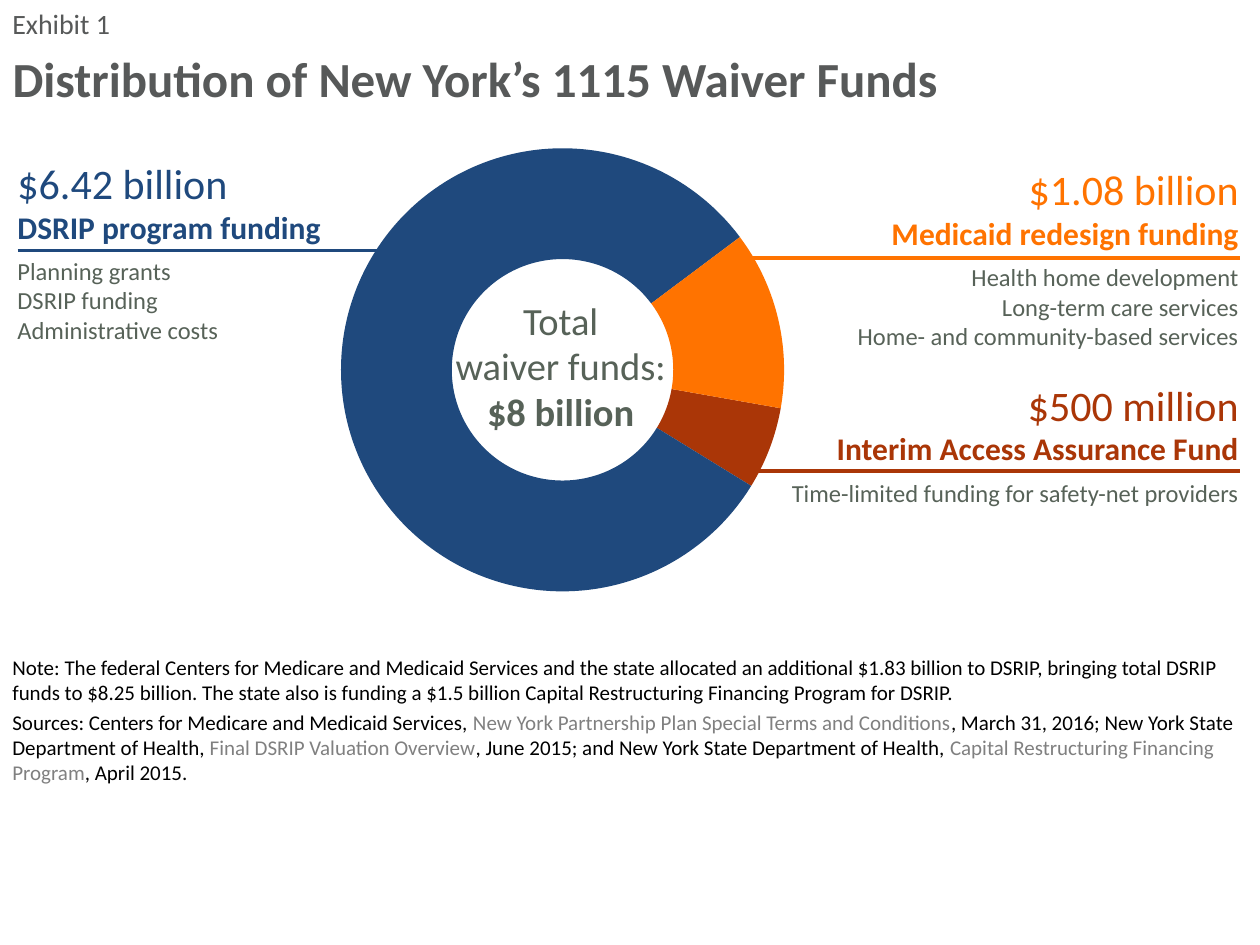
"""Build the exhibit slide on the distribution of New York's 1115 waiver funds."""
from dataclasses import dataclass

from lxml import etree
from pptx import Presentation
from pptx import util as u
from pptx.chart import data as chart_data
from pptx.dml.color import RGBColor
from pptx.enum import chart as chart_enum, shapes, text
from pptx.oxml import parse_xml
from pptx.oxml.ns import nsdecls, qn


@dataclass(frozen=True)
class Theme:
    font: str = "Calibri"
    heading: str = "575959"
    detail: str = "576258"
    note: str = "000000"
    source: str = "808080"
    blue: str = "1F497D"
    orange: str = "FF7300"
    red: str = "AA3607"
    title_size: int = 28
    amount_size: int = 24
    total_size: int = 22
    label_size: int = 18
    exhibit_size: int = 16
    detail_size: int = 14
    note_size: int = 12


THEME = Theme()
LEFT, CENTER, RIGHT = text.PP_ALIGN.LEFT, text.PP_ALIGN.CENTER, text.PP_ALIGN.RIGHT

EXHIBIT = "Exhibit 1"
TITLE = "Distribution of New York’s 1115 Waiver Funds"
TOTAL = [("Total", False), ("waiver funds:", False), ("$8 billion", True)]
SLICES = [("1", 6, THEME.red), ("2", 81, THEME.blue), ("3", 13, THEME.orange)]
FUNDS = [
    dict(amount="$6.42 billion", label="DSRIP program funding", color=THEME.blue, align=LEFT,
         details=["Planning grants", "DSRIP funding", "Administrative costs"],
         box=(0.04, 1.2, 2.66, 1.6), rule=(0.14, 3.21, 1.99)),
    dict(amount="$1.08 billion", label="Medicaid redesign funding", color=THEME.orange, align=RIGHT,
         details=["Health home development", "Long-term care services",
                  "Home- and community-based services"],
         box=(6.43, 1.25, 3.5, 1.6), rule=(5.85, 9.84, 2.05)),
    dict(amount="$500 million", label="Interim Access Assurance Fund", color=THEME.red, align=RIGHT,
         details=["Time-limited funding for safety-net providers"],
         box=(6.06, 2.96, 3.87, 1.13), rule=(5.96, 9.84, 3.74)),
]
NOTES = [
    [("Note: The federal Centers for Medicare and Medicaid Services and the state allocated an "
      "additional $1.83 billion to DSRIP, bringing total DSRIP funds to $8.25 billion. The state "
      "also is funding a $1.5 billion Capital Restructuring Financing Program for DSRIP.", False)],
    [("Sources: Centers for Medicare and Medicaid Services, ", False),
     ("New York Partnership Plan Special Terms and Conditions", True),
     (", March 31, 2016; New York State Department of Health, ", False),
     ("Final DSRIP Valuation Overview", True),
     (", June 2015; and New York State Department of Health, ", False),
     ("Capital Restructuring Financing Program", True),
     (", April 2015.", False)],
]


def inches(values):
    return [u.Inches(value) for value in values]


def style(font, size, color, bold=False):
    font.name, font.size, font.bold = THEME.font, u.Pt(size), bold
    font.color.rgb = RGBColor.from_string(color)


def add_box(slide, box):
    frame = slide.shapes.add_textbox(*inches(box)).text_frame
    frame.word_wrap = True
    return frame


def next_paragraph(frame, first):
    return frame.paragraphs[0] if first else frame.add_paragraph()


def add_headings(slide):
    title = slide.shapes.title
    title.left, title.top, title.width, title.height = inches((0, 0.33, 10, 0.57))
    title.text_frame.text = TITLE
    title.text_frame.vertical_anchor = text.MSO_ANCHOR.MIDDLE
    paragraph = title.text_frame.paragraphs[0]
    paragraph.alignment = LEFT
    style(paragraph.font, THEME.title_size, THEME.heading, True)
    paragraph = add_box(slide, (0, 0, 10, 0.33)).paragraphs[0]
    paragraph.text = EXHIBIT
    style(paragraph.font, THEME.exhibit_size, THEME.heading)


def add_doughnut(slide):
    data = chart_data.CategoryChartData()
    data.categories = [name for name, _, _ in SLICES]
    data.add_series("Series 1", [value for _, value, _ in SLICES])
    chart = slide.shapes.add_chart(
        chart_enum.XL_CHART_TYPE.DOUGHNUT, *inches((2.49, 1.11, 3.93, 3.67)), data).chart
    chart.has_legend = chart.has_title = False
    style(chart.font, 20, THEME.note, True)
    plot = chart.plots[0]
    plot.vary_by_categories = True
    for index, (_, _, color) in enumerate(SLICES):
        point = plot.series[0].points[index].format
        point.fill.solid()
        point.fill.fore_color.rgb = RGBColor.from_string(color)
        point.line.fill.background()
    ring = chart.element.find(".//" + qn("c:doughnutChart"))
    ring.find(qn("c:firstSliceAng")).set("val", "100")
    ring.find(qn("c:holeSize")).set("val", "65")
    area = ring.getparent()
    for old in area.findall(qn("c:layout")):
        area.remove(old)
    layout = parse_xml(f"<c:layout {nsdecls('c')}><c:manualLayout/></c:layout>")
    settings = dict(layoutTarget="inner", xMode="edge", yMode="edge",
                    x=0.055, y=0.018, w=0.895, h=0.959)
    for name, value in settings.items():
        etree.SubElement(layout[0], qn(f"c:{name}")).set("val", str(value))
    area.insert(0, layout)


def add_total(slide):
    paragraph = add_box(slide, (3.4, 2.31, 2.1, 1.19)).paragraphs[0]
    paragraph.alignment = CENTER
    paragraph.line_spacing = u.Pt(26)
    style(paragraph.font, THEME.total_size, THEME.detail)
    for index, (line, bold) in enumerate(TOTAL):
        if index:
            paragraph.add_line_break()
        run = paragraph.add_run()
        run.text = line
        run.font.bold = bold


def add_fund(slide, fund):
    lines = [(fund["amount"], THEME.amount_size, fund["color"], False),
             (fund["label"], THEME.label_size, fund["color"], True)]
    lines += [(line, THEME.detail_size, THEME.detail, False) for line in fund["details"]]
    frame = add_box(slide, fund["box"])
    for index, (line, size, color, bold) in enumerate(lines):
        paragraph = next_paragraph(frame, index == 0)
        paragraph.text = line
        paragraph.alignment = fund["align"]
        if bold:
            paragraph.space_after = u.Pt(6)
        style(paragraph.font, size, color, bold)


def add_rule(slide, fund):
    start, end, top = fund["rule"]
    rule = slide.shapes.add_connector(
        shapes.MSO_CONNECTOR.STRAIGHT, *inches((start, top, end, top)))
    rule.line.color.rgb = RGBColor.from_string(fund["color"])
    rule.line.width = u.Pt(2)
    etree.SubElement(rule.element.spPr, qn("a:effectLst"))


def add_notes(slide):
    frame = add_box(slide, (0, 5.12, 10, 1.16))
    frame.vertical_anchor = text.MSO_ANCHOR.BOTTOM
    for index, parts in enumerate(NOTES):
        paragraph = next_paragraph(frame, index == 0)
        if index:
            paragraph.space_before = u.Pt(2.4)
        style(paragraph.font, THEME.note_size, THEME.note)
        for words, is_source in parts:
            run = paragraph.add_run()
            run.text = words
            if is_source:
                run.font.color.rgb = RGBColor.from_string(THEME.source)


def main():
    presentation = Presentation()
    presentation.slide_width, presentation.slide_height = inches((10, 7.5))
    slide = presentation.slides.add_slide(presentation.slide_layouts[5])
    add_headings(slide)
    add_notes(slide)
    add_doughnut(slide)
    add_total(slide)
    for fund in FUNDS:
        add_fund(slide, fund)
        add_rule(slide, fund)
    presentation.save("out.pptx")


if __name__ == "__main__":
    main()
